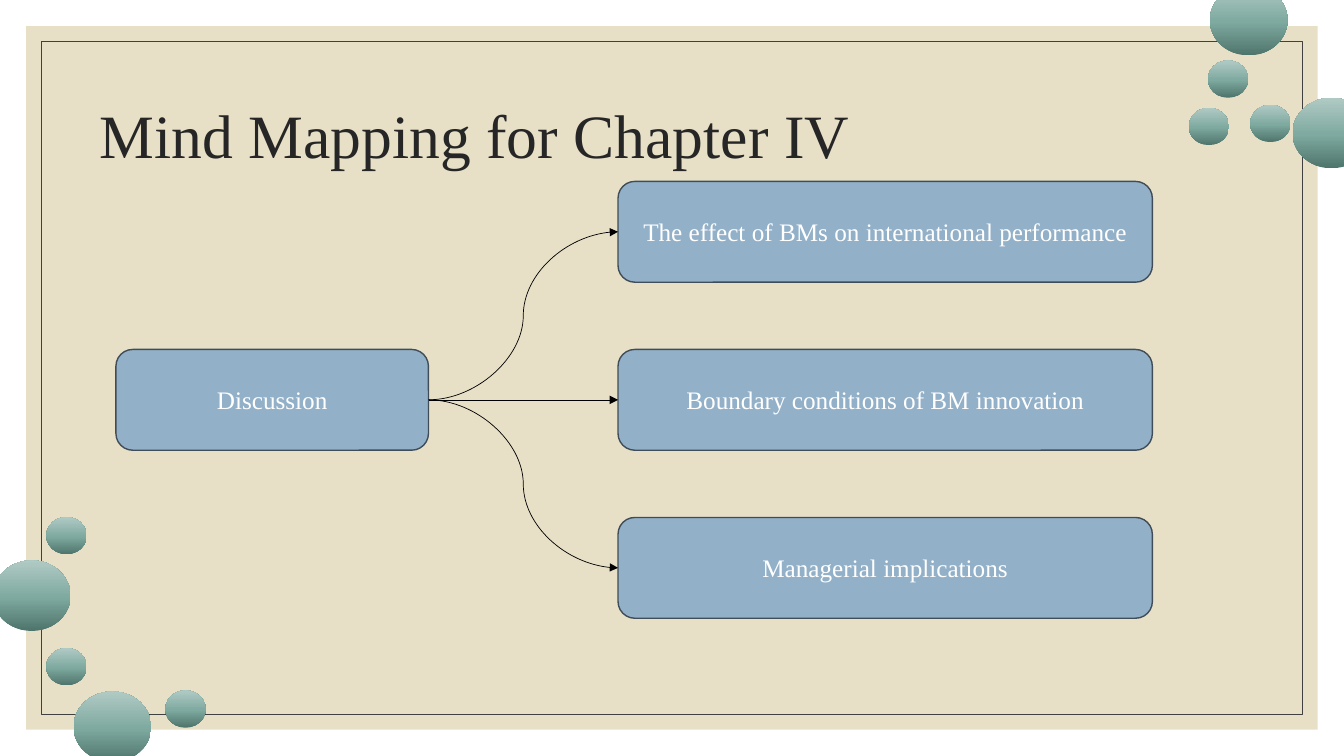
from copy import deepcopy
from pptx import Presentation, util as u
from pptx.dml.color import RGBColor
from pptx.enum import shapes as sh, text as tx
from pptx.oxml import parse_xml
from pptx.oxml.ns import nsdecls, qn

TITLE = "Mind Mapping for Chapter IV"
ROOT = "Discussion"
TOPICS = [
    "The effect of BMs on international performance",
    "Boundary conditions of BM innovation",
    "Managerial implications",
]
BIG = [(12, -0.15), (12.82, 0.97), (-0.07, 5.56), (0.73, 6.86)]
SMALL = [(0.46, 6.43), (0.46, 5.13), (11.79, 1.07),
         (1.64, 6.85), (11.98, 0.6), (12.4, 1.04)]
BUBBLES = [(BIG, 0.77, 0.7), (SMALL, 0.4, 0.37)]
COLORS = {
    "paper": "E7E0C7", "frame": "404040", "title": "262626",
    "box": "92B0C8", "edge": "404D58", "label": "FFFFFF", "arrow": "000000",
}
SHADES = [(0, "4E756C"), (0.48, "7FAAA0"), (1, "B0CAC4")]
FONT = "Times New Roman"
WIDTH, HEIGHT = 13.33, 7.5
TOP, STEP, BOX = 1.8, 1.667, 1
Kind = sh.MSO_SHAPE


def rgb(name):
    return RGBColor.from_string(COLORS[name])


def write(shape, words, size, color, align, space=None):
    frame = shape.text_frame
    frame.word_wrap = True
    frame.auto_size = tx.MSO_AUTO_SIZE.NONE
    frame.vertical_anchor = tx.MSO_ANCHOR.MIDDLE
    para = frame.paragraphs[0]
    para.alignment = align
    if space:
        para.line_spacing = space
    run = para.add_run()
    run.text = words
    run.font.name = FONT
    run.font.size = u.Pt(size)
    run.font.color.rgb = rgb(color)


def draw(slide, kind, place, fill=None, edge=None, weight=1):
    shape = slide.shapes.add_shape(kind, *map(u.Inches, place))
    shape.shadow.inherit = False
    if fill:
        shape.fill.solid()
        shape.fill.fore_color.rgb = rgb(fill)
    else:
        shape.fill.background()
    if edge:
        shape.line.color.rgb = rgb(edge)
        shape.line.width = u.Pt(weight)
    else:
        shape.line.fill.background()
    return shape


def node(slide, words, left, top, width):
    shape = draw(slide, Kind.ROUNDED_RECTANGLE, (left, top, width, BOX),
                 "box", "edge")
    write(shape, words, 18, "label", tx.PP_ALIGN.CENTER)
    return shape


def link(slide, start, end):
    curve = slide.shapes.add_connector(sh.MSO_CONNECTOR.CURVE, 0, 0, 0, 0)
    curve.begin_connect(start, 3)
    curve.end_connect(end, 1)
    curve.line.color.rgb = rgb("arrow")
    curve.line.width = u.Pt(0.5)
    props = curve.element.spPr
    props.find(qn("a:ln")).append(
        parse_xml(f'<a:tailEnd {nsdecls("a")} type="triangle"/>'))
    props.append(parse_xml(f'<a:effectLst {nsdecls("a")}/>'))


def bubble(slide, place):
    shape = draw(slide, Kind.FLOWCHART_CONNECTOR, place)
    shape.fill.gradient()
    shape.fill.gradient_angle = 90
    stops = shape.element.spPr.find(qn("a:gradFill")).find(qn("a:gsLst"))
    stops.append(deepcopy(stops[-1]))
    for stop, (pos, color) in zip(shape.fill.gradient_stops, SHADES):
        stop.position = pos
        stop.color.rgb = RGBColor.from_string(color)


def main():
    deck = Presentation()
    deck.slide_width, deck.slide_height = u.Inches(WIDTH), u.Inches(HEIGHT)
    slide = deck.slides.add_slide(deck.slide_layouts[5])

    for inset, fill, edge in [(0.26, "paper", None), (0.41, None, "frame")]:
        place = (inset, inset, WIDTH - 2 * inset, HEIGHT - 2 * inset)
        draw(slide, Kind.RECTANGLE, place, fill, edge, 0.5)

    title = slide.shapes.title
    title.left, title.top, title.width, title.height = map(
        u.Inches, (0.89, 0.62, 11, 1.5))
    write(title, TITLE, 44, "title", tx.PP_ALIGN.LEFT, space=0.9)
    title.element.getparent().append(title.element)

    root = node(slide, ROOT, 1.15, TOP + STEP, 3.1)
    topics = [node(slide, words, 6.13, TOP + row * STEP, 5.3)
              for row, words in enumerate(TOPICS)]
    for topic in topics:
        link(slide, root, topic)

    for spots, width, height in BUBBLES:
        for left, top in spots:
            bubble(slide, (left, top, width, height))

    deck.save("out.pptx")


if __name__ == "__main__":
    main()
